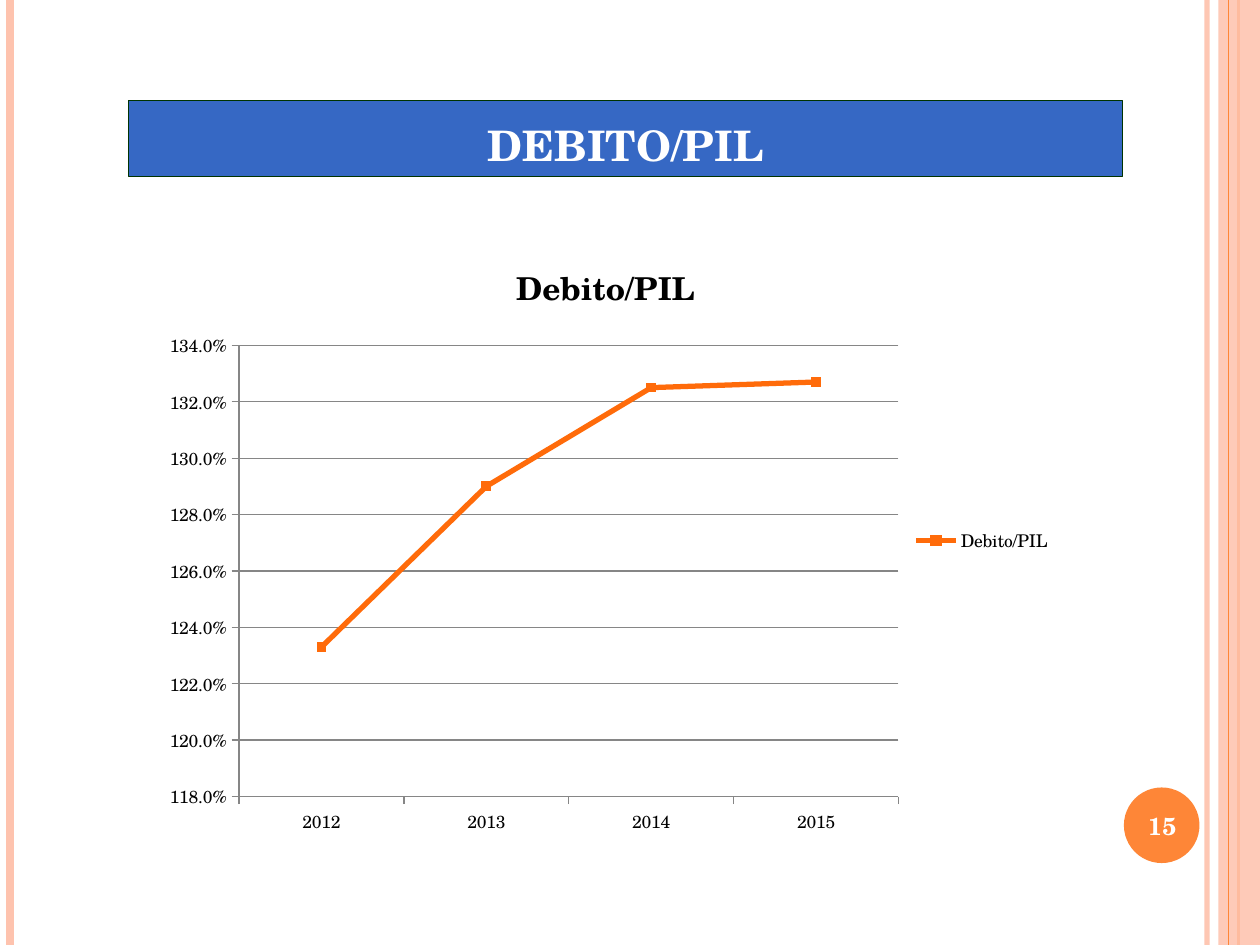
from lxml import etree
from pptx import Presentation
from pptx.chart.data import CategoryChartData
from pptx.dml.color import RGBColor
from pptx.enum.chart import XL_CHART_TYPE, XL_LEGEND_POSITION, XL_MARKER_STYLE, XL_TICK_MARK
from pptx.enum.shapes import MSO_CONNECTOR, MSO_SHAPE
from pptx.enum.text import MSO_ANCHOR, PP_ALIGN
from pptx.oxml.ns import qn
from pptx.util import Inches, Pt

LINE_MARKERS = XL_CHART_TYPE.LINE_MARKERS
LEGEND_RIGHT = XL_LEGEND_POSITION.RIGHT
SQUARE = XL_MARKER_STYLE.SQUARE
TICK_OUT = XL_TICK_MARK.OUTSIDE
STRAIGHT = MSO_CONNECTOR.STRAIGHT
RECTANGLE, OVAL = MSO_SHAPE.RECTANGLE, MSO_SHAPE.OVAL
MIDDLE, BOTTOM = MSO_ANCHOR.MIDDLE, MSO_ANCHOR.BOTTOM
CENTER = PP_ALIGN.CENTER

# Content
WIDTH, HEIGHT = 10, 7.5
FONT = "TeX Gyre Schola"
PEACH, ORANGE, SERIES_ORANGE = "FEC3AE", "FE8637", "FF6B0A"
BLUE, GREEN, GREY, WHITE, BLACK = "3668C4", "003300", "868686", "FFFFFF", "000000"
TITLE, PAGE_NUMBER = "DEBITO/PIL", "15"
SERIES = "Debito/PIL"
DEBT_RATIO = {"2012": 1.233, "2013": 1.29, "2014": 1.325, "2015": 1.327}
VALUE_AXIS = {"minimum_scale": 1.18, "maximum_scale": 1.34, "major_unit": 0.02}
PLOT_AREA = {"x": 0.1, "y": 0.18, "w": 0.72, "h": 0.74}  # shares of the chart

# Vertical rules: x, colour, width in points, opacity in percent
RULES_BELOW = [(9.58, PEACH, 3, 93), (0.08, PEACH, 4.5, 100), (9.83, ORANGE, 1.5, 100)]
RULES_ABOVE = [(9.75, ORANGE, 0.75, 100)]


def color(value):
    return RGBColor.from_string(value)


def set_opacity(element, percent):
    for node in element.iter(qn("a:srgbClr")):
        etree.SubElement(node, qn("a:alpha")).set("val", str(percent * 1000))


def set_format(target, values):
    for name, value in values.items():
        setattr(target, name, value)


def set_font(font, size, value, bold=False):
    set_format(font, {"name": FONT, "size": Pt(size), "bold": bold})
    font.color.rgb = color(value)


def set_line(line, value, width):
    line.color.rgb = color(value)
    line.width = Pt(width)


def add_rules(page, rules):
    for x, value, width, opacity in rules:
        rule = page.shapes.add_connector(
            STRAIGHT, Inches(x), Inches(0), Inches(x), Inches(HEIGHT))
        set_line(rule.line, value, width)
        properties = rule.element.spPr
        if opacity < 100:
            set_opacity(properties, opacity)
        etree.SubElement(properties, qn("a:effectLst"))


def add_block(page, kind, place, fill):
    block = page.shapes.add_shape(kind, *map(Inches, place))
    block.shadow.inherit = False
    block.fill.solid()
    block.fill.fore_color.rgb = color(fill)
    block.line.fill.background()
    return block


def write(box, text, size, anchor):
    set_format(box.text_frame, {"word_wrap": True, "vertical_anchor": anchor})
    para = box.text_frame.paragraphs[0]
    para.alignment = CENTER
    span = para.add_run()
    span.text = text
    set_font(span.font, size, WHITE, True)


def place_plot(chart):
    area = chart.element.find(".//" + qn("c:plotArea"))
    for old in area.findall(qn("c:layout")):
        area.remove(old)
    layout = etree.Element(qn("c:layout"))
    manual = etree.SubElement(layout, qn("c:manualLayout"))
    settings = {"layoutTarget": "inner", "xMode": "edge", "yMode": "edge", **PLOT_AREA}
    for name, value in settings.items():
        etree.SubElement(manual, qn("c:" + name)).set("val", str(value))
    area.insert(0, layout)


def add_debt_chart(page, place):
    data = CategoryChartData(number_format="0.0%")
    data.categories = list(DEBT_RATIO)
    data.add_series(SERIES, list(DEBT_RATIO.values()))
    chart = page.shapes.add_chart(LINE_MARKERS, *map(Inches, place), data).chart
    set_font(chart.font, 10, BLACK)

    # Title and legend
    chart.has_title = True
    para = chart.chart_title.text_frame.paragraphs[0]
    span = para.add_run()
    span.text = SERIES
    set_font(span.font, 18, BLACK, True)
    chart.has_legend = True
    set_format(chart.legend, {"position": LEGEND_RIGHT, "include_in_layout": False})

    # Axes
    values = chart.value_axis
    set_format(values, VALUE_AXIS)
    values.has_major_gridlines = True
    set_format(values.tick_labels, {"number_format": "0.0%", "number_format_is_linked": False})
    set_line(values.major_gridlines.format.line, GREY, 0.75)
    for axis in (values, chart.category_axis):
        axis.major_tick_mark = TICK_OUT
        set_line(axis.format.line, GREY, 0.75)

    # Series
    chart.plots[0].vary_by_categories = False
    series = chart.plots[0].series[0]
    series.smooth = False
    set_line(series.format.line, SERIES_ORANGE, 3)
    marker = series.marker
    set_format(marker, {"style": SQUARE, "size": 5})
    marker.format.fill.solid()
    marker.format.fill.fore_color.rgb = color(SERIES_ORANGE)
    set_line(marker.format.line, SERIES_ORANGE, 0.75)
    place_plot(chart)


def main():
    deck = Presentation()
    deck.slide_width, deck.slide_height = Inches(WIDTH), Inches(HEIGHT)
    page = deck.slides.add_slide(deck.slide_layouts[6])

    # Side decoration
    add_rules(page, RULES_BELOW)
    band = add_block(page, RECTANGLE, (9.67, 0, 0.33, HEIGHT), PEACH)
    set_opacity(band.element.spPr, 87)
    add_rules(page, RULES_ABOVE)
    add_block(page, OVAL, (8.92, 6.25, 0.6, 0.6), ORANGE)

    # Title bar
    title = add_block(page, RECTANGLE, (1.02, 0.8, 7.89, 0.6), BLUE)
    set_line(title.line, GREEN, 0.75)
    write(title, TITLE, 24, BOTTOM)

    add_debt_chart(page, (1.17, 1.87, 7.27, 4.84))

    # Page number
    number = page.shapes.add_textbox(*map(Inches, (8.89, 6.27, 0.67, 0.57)))
    write(number, PAGE_NUMBER, 14, MIDDLE)

    deck.save("out.pptx")


if __name__ == "__main__":
    main()
